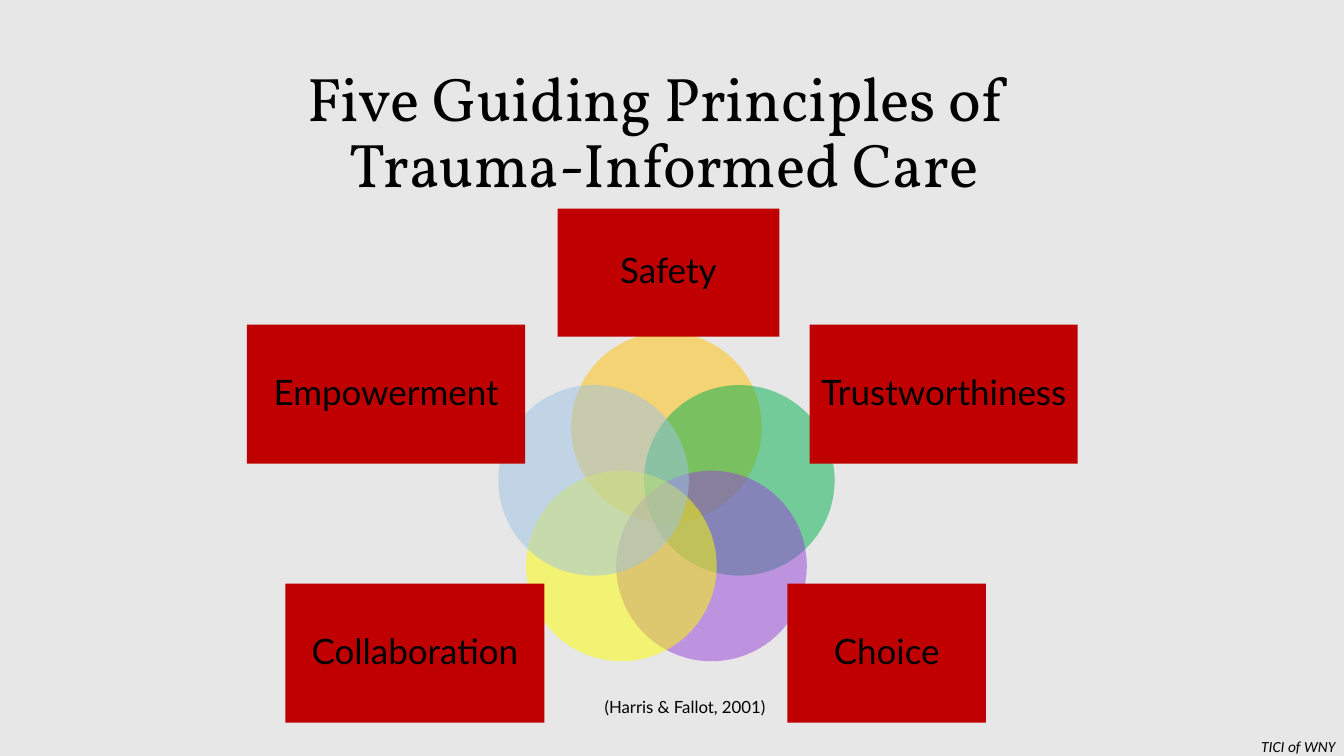
from math import cos, pi, sin

from lxml.etree import SubElement
from pptx import Presentation
from pptx.dml.color import RGBColor
from pptx.enum.shapes import MSO_SHAPE
from pptx.enum.text import MSO_ANCHOR, PP_ALIGN
from pptx.oxml.ns import qn
from pptx.util import Inches, Pt

# Content: label, circle colour, label box (left, top, width, height)
PRINCIPLES = [
    ("Safety", "FFC000", (5.53, 2.07, 2.2, 1.27)),
    ("Trustworthiness", "00B14F", (8.03, 3.22, 2.66, 1.38)),
    ("Choice", "953ED8", (7.81, 5.79, 1.97, 1.38)),
    ("Collaboration", "FFFF00", (2.83, 5.79, 2.57, 1.38)),
    ("Empowerment", "9DC3E6", (2.45, 3.22, 2.76, 1.38)),
]
TEXTS = [
    (["Five Guiding Principles of ", "Trauma-Informed Care"], "title", (0.84, 0.61, 11.5, 1.45)),
    (["TICI of WNY "], "credit", (12.46, 7.26, 0.87, 0.24)),
    (["(Harris & Fallot, 2001)"], "citation", (3.8, 6.86, 5.99, 0.3)),
]

THEME = {
    "background": "E7E7E7",
    "label_fill": "C00000",
    "text": "000000",
    "circle_alpha": 50,
    "title": {"font": {"name": "Vollkorn", "size": Pt(44)}, "spacing": 0.9, "anchor": MSO_ANCHOR.MIDDLE},
    "label": {"font": {"name": "Lato", "size": Pt(25)}, "spacing": 0.9, "anchor": MSO_ANCHOR.MIDDLE},
    "credit": {"font": {"name": "Calibri", "size": Pt(11), "italic": True}, "spacing": 1.0, "anchor": MSO_ANCHOR.TOP},
    "citation": {"font": {"name": "Lato", "size": Pt(12)}, "spacing": 1.0, "anchor": MSO_ANCHOR.TOP},
}

# Ring of circles
CENTER_X, CENTER_Y = 6.61, 5.0
RING_RADIUS, DIAMETER = 0.76, 1.89


def write(box, lines, style_name):
    style = THEME[style_name]
    frame = box.text_frame
    frame.word_wrap = True
    frame.vertical_anchor = style["anchor"]
    if style_name in ("label", "credit"):
        frame.margin_left = frame.margin_right = 0
    para = frame.paragraphs[0]
    para.alignment = PP_ALIGN.CENTER
    para.line_spacing = style["spacing"]
    for index, line in enumerate(lines):
        if index:
            para.add_line_break()
        span = para.add_run()
        span.text = line
        span.font.color.rgb = RGBColor.from_string(THEME["text"])
        for name, value in style["font"].items():
            setattr(span.font, name, value)


def add_filled(page, kind, place, color, alpha=None):
    shape = page.shapes.add_shape(kind, *map(Inches, place))
    shape.shadow.inherit = False
    shape.line.fill.background()
    shape.fill.solid()
    shape.fill.fore_color.rgb = RGBColor.from_string(color)
    if alpha is not None:
        color_node = shape.fill._xPr.find(".//" + qn("a:srgbClr"))
        SubElement(color_node, qn("a:alpha")).set("val", str(alpha * 1000))
    return shape


def main():
    deck = Presentation()
    deck.slide_width, deck.slide_height = Inches(13.33), Inches(7.5)
    page = deck.slides.add_slide(deck.slide_layouts[6])
    page.background.fill.solid()
    page.background.fill.fore_color.rgb = RGBColor.from_string(THEME["background"])

    # Circles run clockwise from the top, each followed by its label
    for index, (label, color, place) in enumerate(PRINCIPLES):
        angle = 2 * pi * index / len(PRINCIPLES)
        left = CENTER_X + RING_RADIUS * sin(angle) - DIAMETER / 2
        top = CENTER_Y - RING_RADIUS * cos(angle) - DIAMETER / 2
        add_filled(page, MSO_SHAPE.OVAL, (left, top, DIAMETER, DIAMETER), color, THEME["circle_alpha"])
        write(add_filled(page, MSO_SHAPE.RECTANGLE, place, THEME["label_fill"]), [label], "label")

    # Title, credit and citation
    for lines, style_name, place in TEXTS:
        write(page.shapes.add_textbox(*map(Inches, place)), lines, style_name)

    deck.save("out.pptx")


if __name__ == "__main__":
    main()
